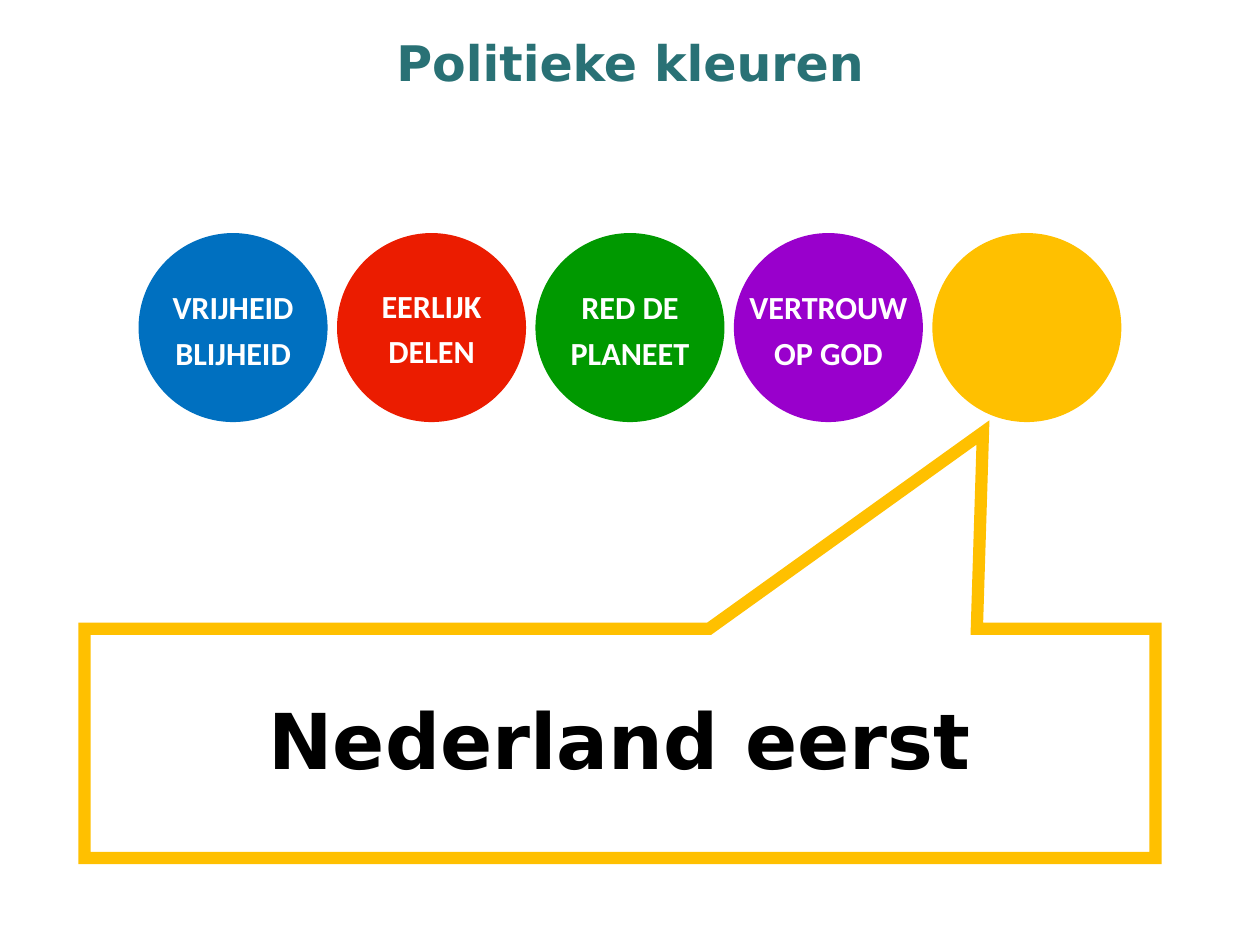
from lxml import etree
from pptx import Presentation
from pptx.dml.color import RGBColor
from pptx.enum.shapes import MSO_SHAPE as Shape
from pptx.enum.text import MSO_ANCHOR as Anchor, PP_ALIGN as Align
from pptx.oxml.ns import qn
from pptx.util import Inches, Pt

COLORS = {
    "blue": "0070C0",
    "red": "EB1C00",
    "green": "009900",
    "purple": "9900CC",
    "yellow": "FFC000",
    "teal": "297175",
    "black": "000000",
    "white": "FFFFFF",
}
# Colour, slogan lines, top of the slogan within the circle
MOVEMENTS = [
    ("blue", ["vrijheid", "blijheid"], 0.34),
    ("red", ["eerlijk", "delen"], 0.33),
    ("green", ["red de planeet"], 0.34),
    ("purple", ["vertrouw op god"], 0.34),
    ("yellow", [], 0),
]


def rgb(name):
    return RGBColor.from_string(COLORS[name])


def place(shape, left, top, width, height):
    shape.left, shape.top = Inches(left), Inches(top)
    shape.width, shape.height = Inches(width), Inches(height)


def write_lines(frame, lines, font, size, color, spacing=None, small_caps=False):
    frame.word_wrap = True
    frame.vertical_anchor = Anchor.TOP
    for index, line in enumerate(lines):
        paragraph = frame.add_paragraph() if index else frame.paragraphs[0]
        paragraph.alignment = Align.CENTER
        if spacing:
            paragraph.line_spacing = Pt(spacing)
        run = paragraph.add_run()
        run.text = line
        run.font.name, run.font.size, run.font.bold = font, Pt(size), True
        run.font.color.rgb = rgb(color)
        if small_caps:
            run._r.get_or_add_rPr().set("cap", "small")


def add_title(slide, left, top, width, height):
    title = slide.shapes.title
    place(title, left, top, width, height)
    write_lines(title.text_frame, ["Politieke kleuren"], "DejaVu Sans", 28, "teal")


def add_circles(slide, left, top, width, diameter):
    step = (width - diameter) / (len(MOVEMENTS) - 1)
    for index, (color, slogan, offset) in enumerate(MOVEMENTS):
        x = left + index * step
        circle = slide.shapes.add_shape(
            Shape.OVAL, Inches(x), Inches(top), Inches(diameter), Inches(diameter))
        circle.shadow.inherit = False
        circle.fill.solid()
        circle.fill.fore_color.rgb = rgb(color)
        circle.line.fill.background()
        if slogan:
            label = slide.shapes.add_textbox(
                Inches(x), Inches(top + offset), Inches(diameter), Inches(0.83))
            write_lines(label.text_frame, slogan, "Calibri", 23, "white", 26, True)


def add_callout(slide, left, top, width, height):
    # Slogan of the yellow movement
    slogan = slide.shapes.add_textbox(
        Inches(left), Inches(top + 0.46), Inches(width), Inches(0.84))
    write_lines(slogan.text_frame, ["Nederland eerst"], "DejaVu Sans", 44, "black")

    # Outline pointing at the yellow circle
    callout = slide.shapes.add_shape(
        Shape.RECTANGULAR_CALLOUT,
        Inches(left), Inches(top), Inches(width), Inches(height))
    callout.adjustments[0], callout.adjustments[1] = 0.339, -1.356
    callout.shadow.inherit = False
    callout.fill.background()
    callout.line.color.rgb = rgb("yellow")
    callout.line.width = Pt(7)
    outline = callout.line._get_or_add_ln()
    etree.SubElement(outline, qn("a:miter")).set("lim", "800000")


def main():
    deck = Presentation()
    deck.slide_width, deck.slide_height = Inches(10), Inches(7.5)
    slide = deck.slides.add_slide(deck.slide_layouts[5])
    add_circles(slide, 1.1, 1.85, 7.8, 1.5)
    add_callout(slide, 0.67, 4.99, 8.5, 1.82)
    add_title(slide, 0, 0.21, 10, 0.57)
    deck.save("out.pptx")


if __name__ == "__main__":
    main()
